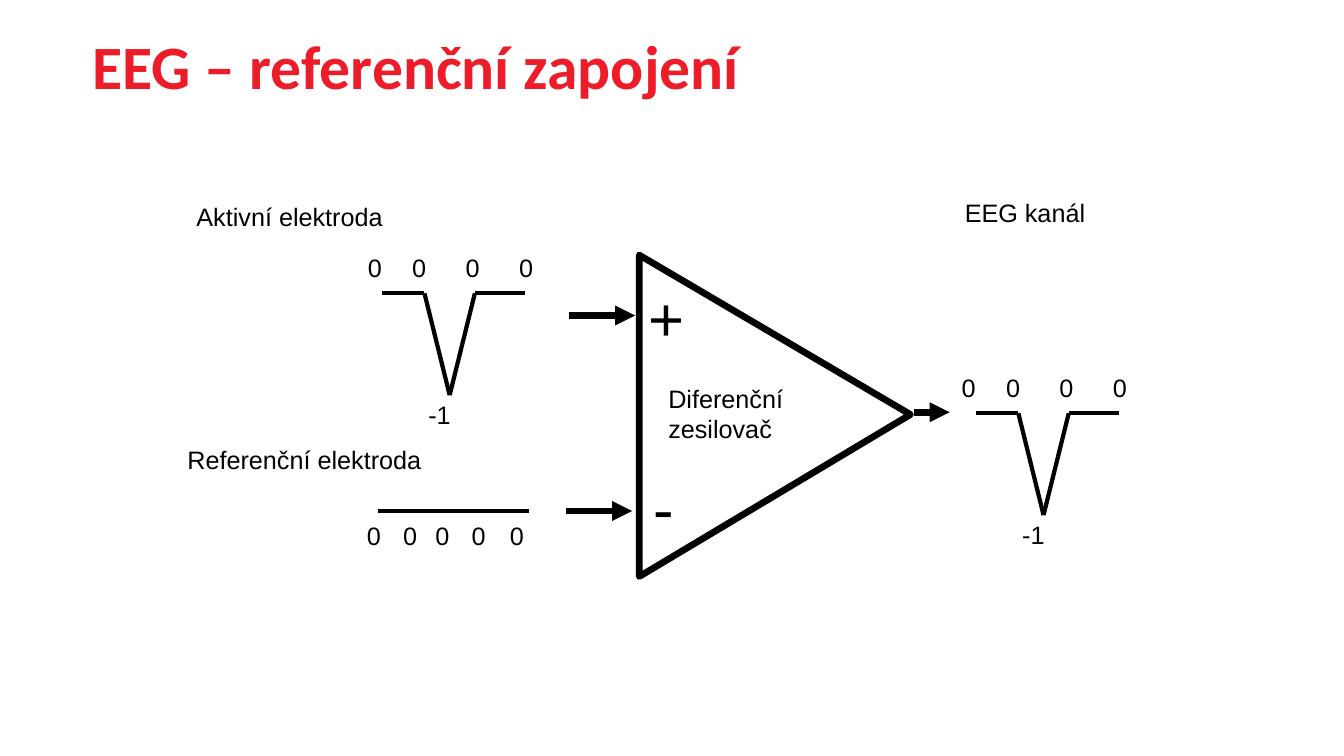
from itertools import pairwise

from lxml import etree
from pptx import Presentation
from pptx.dml.color import RGBColor
from pptx.enum import shapes, text
from pptx.oxml.ns import qn
from pptx.util import Inches, Pt

COLORS = {"ink": "000000", "title": "ED1C29"}
SIGNAL_WIDTH = 3
BOLD_WIDTH = 4.75


def color(name):
    return RGBColor.from_string(COLORS[name])


class Diagram:
    def __init__(self, slide):
        self.shapes = slide.shapes

    def label(self, words, left, top, width, height=0.4, size=18, font="Arial",
              ink="ink", bold=False, wrap=False, parent=None):
        box = (parent or self.shapes).add_textbox(
            Inches(left), Inches(top), Inches(width), Inches(height))
        frame = box.text_frame
        frame.word_wrap = wrap
        frame.auto_size = text.MSO_AUTO_SIZE.SHAPE_TO_FIT_TEXT
        frame.text = words
        style = frame.paragraphs[0].font
        style.name, style.size, style.bold = font, Pt(size), bold
        style.color.rgb = color(ink)

    def stroke(self, start, end, width=SIGNAL_WIDTH, parent=None):
        stroke = (parent or self.shapes).add_connector(
            shapes.MSO_CONNECTOR.STRAIGHT, *map(Inches, (*start, *end)))
        stroke.line.color.rgb = color("ink")
        stroke.line.width = Pt(width)
        etree.SubElement(stroke._element.spPr, qn("a:effectLst"))
        return stroke

    def arrow(self, left, y, length):
        arrow = self.stroke((left, y), (left + length, y), BOLD_WIDTH)
        etree.SubElement(arrow.line._get_or_add_ln(), qn("a:tailEnd"), type="triangle")

    def amplifier(self, left, top, width, height):
        """Triangle pointing right; the box is the one before rotation."""
        amplifier = self.shapes.add_shape(
            shapes.MSO_SHAPE.ISOSCELES_TRIANGLE, *map(Inches, (left, top, width, height)))
        amplifier.rotation = 90
        amplifier.adjustments[0] = 0.496
        amplifier.shadow.inherit = False
        amplifier.fill.background()
        amplifier.line.color.rgb = color("ink")
        amplifier.line.width = Pt(BOLD_WIDTH)
        etree.SubElement(amplifier.line._get_or_add_ln(), qn("a:round"))

    def zeros(self, lefts, top, group):
        for left in lefts:
            self.label("0", left, top, 0.34, parent=group)

    def pulse(self, x, y):
        """Signal that dips from 0 to -1 and returns."""
        group = self.shapes.add_group_shape().shapes
        outline = [(0, 0), (0.42, 0), (0.67, 1.01), (0.92, 0), (1.42, 0)]
        points = [(x + dx, y + dy) for dx, dy in outline]
        for start, end in pairwise(points):
            self.stroke(start, end, parent=group)
        self.label("-1", x + 0.36, y + 1, 0.43, parent=group)
        self.zeros([x + dx for dx in (-0.24, 0.2, 0.73, 1.26)], y - 0.46, group)

    def flat_signal(self, x, y):
        group = self.shapes.add_group_shape().shapes
        self.stroke((x, y), (x + 1.5, y), parent=group)
        self.zeros([x + dx for dx in (-0.21, 0.15, 0.47, 0.83, 1.21)], y + 0.04, group)


def main():
    deck = Presentation()
    deck.slide_width, deck.slide_height = Inches(13.33), Inches(7.5)
    diagram = Diagram(deck.slides.add_slide(deck.slide_layouts[6]))

    diagram.label("+", 6.33, 2.73, 0.56, 0.84, size=44)
    diagram.amplifier(6.09, 2.78, 3.19, 2.69)
    for left, y, length in [(5.64, 3.13, 0.66), (5.61, 5.07, 0.66), (9.07, 4.09, 0.35)]:
        diagram.arrow(left, y, length)
    diagram.label("-", 6.38, 4.61, 0.41, 0.84, size=44)

    diagram.flat_signal(3.75, 5.07)
    diagram.pulse(3.79, 2.91)
    diagram.pulse(9.68, 4.1)

    diagram.label("EEG – referenční zapojení", 0.82, 0.23, 9.31, 0.84, size=44,
                  font="Calibri", ink="title", bold=True, wrap=True)
    for words, *box in [
        ("Referenční elektroda", 1.76, 4.36, 2.72, 0.4),
        ("Aktivní elektroda", 1.85, 1.95, 2.11, 0.4),
        ("EEG kanál", 9.47, 1.91, 2.41, 0.4),
        ("Diferenční zesilovač", 6.53, 3.75, 1.67, 0.71),
    ]:
        diagram.label(words, *box, wrap=True)

    deck.save("out.pptx")


if __name__ == "__main__":
    main()
